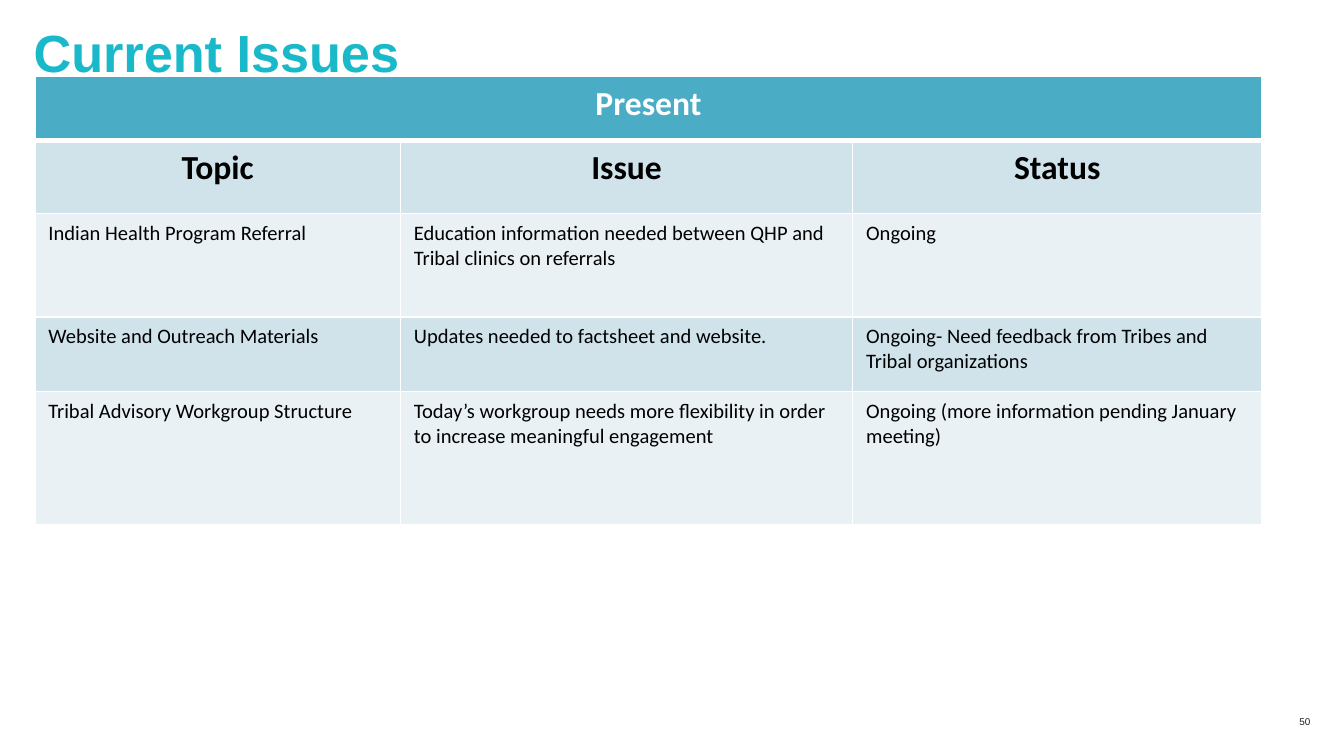
from lxml import etree
from pptx import Presentation
from pptx.dml.color import RGBColor
from pptx.enum.text import MSO_ANCHOR, MSO_AUTO_SIZE, PP_ALIGN
from pptx.oxml.ns import qn
from pptx.util import Pt

PX = 4572
LEFT, CENTER, RIGHT = PP_ALIGN.LEFT, PP_ALIGN.CENTER, PP_ALIGN.RIGHT
TOP, MIDDLE = MSO_ANCHOR.TOP, MSO_ANCHOR.MIDDLE
NO_FIT = MSO_AUTO_SIZE.NONE
TITLE_ONLY = 5

COLORS = {
    "title": "19B9CA",
    "head": "4BACC6",
    "dark": "D0E3EA",
    "light": "E9F1F5",
    "white": "FFFFFF",
    "black": "000000",
    "number": "231F20",
}
COLS = [544, 673, 609]
ROWS = [95, 109, 154, 111, 198]
ISSUES = [
    ["Present", "", ""],
    ["Topic", "Issue", "Status"],
    ["Indian Health Program Referral",
     "Education information needed between QHP and Tribal clinics on referrals",
     "Ongoing"],
    ["Website and Outreach Materials",
     "Updates needed to factsheet and website.",
     "Ongoing- Need feedback from Tribes and Tribal organizations"],
    ["Tribal Advisory Workgroup Structure",
     "Today’s workgroup needs more flexibility in order to increase meaningful engagement",
     "Ongoing (more information pending January meeting)"],
]


def px(*sizes):
    """Turn px lengths into a list of EMU lengths."""
    return [size * PX for size in sizes]


def write(frame, text, size, color, font="Arial", bold=False, align=LEFT):
    """Write one formatted paragraph into a text frame."""
    para = frame.paragraphs[0]
    para.alignment = align
    run = para.add_run()
    run.text = text
    run.font.size = Pt(size)
    run.font.name = font
    run.font.bold = bold
    run.font.color.rgb = RGBColor.from_string(COLORS[color])


def fit(shape, box, anchor):
    """Place a text shape in a box without margins."""
    shape.left, shape.top, shape.width, shape.height = px(*box)
    frame = shape.text_frame
    frame.margin_left = frame.margin_right = 0
    frame.margin_top = frame.margin_bottom = 0
    frame.word_wrap = True
    frame.auto_size = NO_FIT
    frame.vertical_anchor = anchor
    return frame


def edge(cell, side, width):
    """Draw a white border on one side of a cell."""
    props = cell._tc.get_or_add_tcPr()
    line = etree.SubElement(props, qn(f"a:ln{side}"), w=str(Pt(width)))
    fill = etree.SubElement(line, qn("a:solidFill"))
    etree.SubElement(fill, qn("a:srgbClr"), val=COLORS["white"])


def style(cell, row):
    """Give a cell the borders and fill of its row."""
    thick = {(0, "B"), (1, "T")}
    for side in "LRTB":
        edge(cell, side, 3 if (row, side) in thick else 1)
    shade = "head" if row == 0 else "dark" if row % 2 else "light"
    cell.fill.solid()
    cell.fill.fore_color.rgb = RGBColor.from_string(COLORS[shade])


def add_title(slide, box):
    """Fill the title placeholder."""
    frame = fit(slide.shapes.title, box, TOP)
    write(frame, "Current Issues", 28, "title", bold=True)


def add_number(slide, box):
    """Add the page number."""
    frame = fit(slide.shapes.add_textbox(*px(*box)), box, MIDDLE)
    write(frame, "50", 5.3, "number", align=RIGHT)


def add_issues(slide, left, top):
    """Add the table of issues with its corner at the given point."""
    box = px(left, top, sum(COLS), sum(ROWS))
    table = slide.shapes.add_table(len(ROWS), len(COLS), *box).table
    for col, width in zip(table.columns, px(*COLS)):
        col.width = width
    for row, height in zip(table.rows, px(*ROWS)):
        row.height = height
    for r, texts in enumerate(ISSUES):
        head = r < 2
        for c, text in enumerate(texts):
            cell = table.cell(r, c)
            style(cell, r)
            if text:
                write(cell.text_frame, text, 18 if head else 11,
                      "black" if r else "white", font="Calibri",
                      bold=head, align=CENTER if head else LEFT)
    table.cell(0, 0).merge(table.cell(0, len(COLS) - 1))


def main():
    """Build and save the slide."""
    deck = Presentation()
    deck.slide_width, deck.slide_height = px(2000, 1125)
    slide = deck.slides.add_slide(deck.slide_layouts[TITLE_ONLY])
    add_title(slide, (50, 30, 1900, 138))
    add_number(slide, (1790, 1044, 160, 60))
    add_issues(slide, 52, 114)
    deck.save("out.pptx")


if __name__ == "__main__":
    main()
